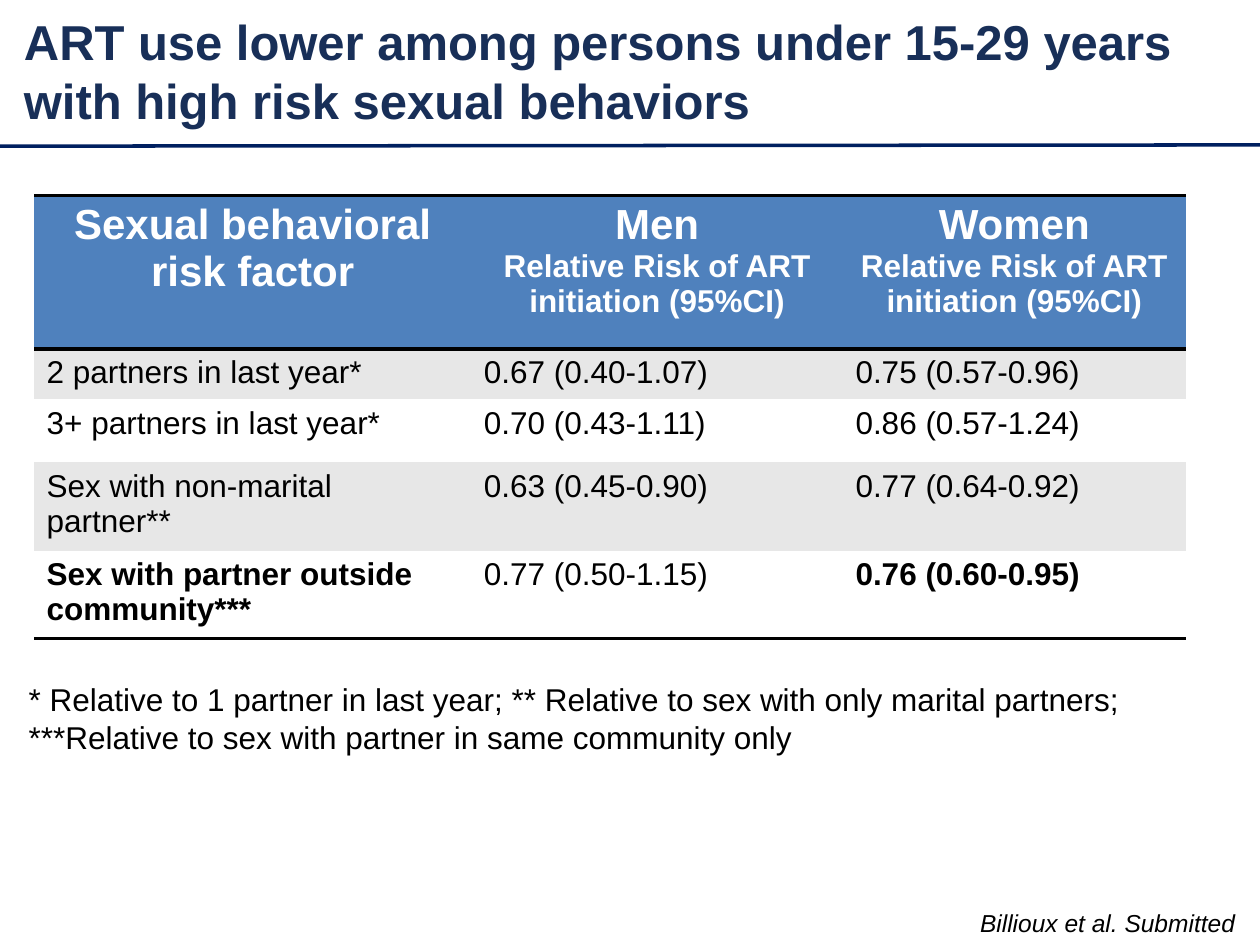
from lxml.etree import SubElement
from pptx import Presentation
from pptx.dml.color import RGBColor
from pptx.enum.shapes import MSO_CONNECTOR as Connector
from pptx.enum.text import MSO_ANCHOR as Anchor, PP_ALIGN as Align
from pptx.oxml.ns import qn
from pptx.util import Inches, Pt

NAVY = RGBColor(0x18, 0x2F, 0x58)
RULE_BLUE = RGBColor(0x00, 0x20, 0x60)
HEADER_BLUE = RGBColor(0x4F, 0x81, 0xBD)
BAND_GREY = RGBColor(0xE7, 0xE7, 0xE7)
WHITE = RGBColor(0xFF, 0xFF, 0xFF)
BLACK = RGBColor(0x00, 0x00, 0x00)

NO_STYLE = "{2D5ABB26-0587-4C30-8999-92F81FD0307C}"
COLUMNS = [3.47, 2.95, 2.72]
ROWS = [1.22, 0.4, 0.5, 0.7, 0.7]
MEASURE = "Relative Risk of ART initiation (95%CI)"
HEADER = [["Sexual behavioral risk factor"], ["Men", MEASURE], ["Women", MEASURE]]
FINDINGS = [
    ["2 partners in last year*", "0.67 (0.40-1.07)", "0.75 (0.57-0.96)"],
    ["3+ partners in last year*", "0.70 (0.43-1.11)", "0.86 (0.57-1.24)"],
    ["Sex with non-marital partner**", "0.63 (0.45-0.90)", "0.77 (0.64-0.92)"],
    ["Sex with partner outside community***", "0.77 (0.50-1.15)", "0.76 (0.60-0.95)"],
]
BOLD_CELLS = {(4, 0), (4, 2)}


def write(para, text, size, color=BLACK, **formats):
    """Add one formatted Arial span to a paragraph."""
    span = para.add_run()
    span.text = text
    for name, value in {"name": "Arial", "size": Pt(size), **formats}.items():
        setattr(span.font, name, value)
    span.font.color.rgb = color


def place(shape, left, top, width, height):
    """Set a shape's position and size in inches."""
    for name, value in zip(("left", "top", "width", "height"), (left, top, width, height)):
        setattr(shape, name, Inches(value))


def add_title(page, text):
    """Place and fill the title placeholder."""
    title = page.shapes.title
    place(title, 0.09, 0.04, 9.91, 1.25)
    title.text_frame.vertical_anchor = Anchor.TOP
    para = title.text_frame.paragraphs[0]
    para.alignment = Align.LEFT
    write(para, text, 28, NAVY, bold=True)


def add_text(page, bounds, text, size, **formats):
    """Add a left-aligned, wrapping text box."""
    frame = page.shapes.add_textbox(*map(Inches, bounds)).text_frame
    frame.word_wrap = True
    write(frame.paragraphs[0], text, size, **formats)


def add_rule(page):
    """Draw the line below the title."""
    rule = page.shapes.add_connector(
        Connector.STRAIGHT, 0, Inches(1.16), Inches(10.06), Inches(1.15))
    rule.line.color.rgb, rule.line.width = RULE_BLUE, Pt(2)
    SubElement(rule._element.spPr, qn("a:effectLst"))


def add_border(cell, side):
    """Give one side of a cell a black two-point border."""
    line = SubElement(cell._tc.get_or_add_tcPr(), qn(f"a:{side}"), w=str(Pt(2)))
    SubElement(SubElement(line, qn("a:solidFill")), qn("a:srgbClr"), val=str(BLACK))


def fill_cell(cell, lines, row, column):
    """Write, border and fill one table cell."""
    is_header = row == 0
    sides = {0: ("lnT", "lnB"), len(ROWS) - 1: ("lnB",)}
    for side in sides.get(row, ()):
        add_border(cell, side)
    cell.fill.solid()
    cell.fill.fore_color.rgb = HEADER_BLUE if is_header else BAND_GREY if row % 2 else WHITE
    for index, text in enumerate(lines):
        para = cell.text_frame.add_paragraph() if index else cell.text_frame.paragraphs[0]
        para.alignment = Align.CENTER if is_header else Align.LEFT
        write(para, text, 24 if is_header and index == 0 else 18,
              WHITE if is_header else BLACK,
              bold=is_header or (row, column) in BOLD_CELLS)


def add_risk_table(page):
    """Add the table of relative risks."""
    bounds = map(Inches, (0.27, 1.55, sum(COLUMNS), sum(ROWS)))
    table = page.shapes.add_table(len(ROWS), len(COLUMNS), *bounds).table
    table._tbl.tblPr.find(qn("a:tableStyleId")).text = NO_STYLE
    for column, width in zip(table.columns, COLUMNS):
        column.width = Inches(width)
    for row, height in zip(table.rows, ROWS):
        row.height = Inches(height)
    contents = [HEADER] + [[[text] for text in finding] for finding in FINDINGS]
    for row, cells in enumerate(contents):
        for column, lines in enumerate(cells):
            fill_cell(table.cell(row, column), lines, row, column)


def main():
    """Build and save the slide."""
    deck = Presentation()
    deck.slide_width, deck.slide_height = Inches(10), Inches(7.5)
    page = deck.slides.add_slide(deck.slide_layouts[5])
    add_title(page, "ART use lower among persons under 15-29 years "
                    "with high risk sexual behaviors")
    add_rule(page)
    add_text(page, (7.68, 7.16, 2.32, 0.34), "Billioux et al. Submitted", 14, italic=True)
    add_risk_table(page)
    add_text(page, (0.13, 5.35, 9.8, 0.71),
             "* Relative to 1 partner in last year; ** Relative to sex with only marital "
             "partners; ***Relative to sex with partner in same community only", 18)
    deck.save("out.pptx")


if __name__ == "__main__":
    main()
